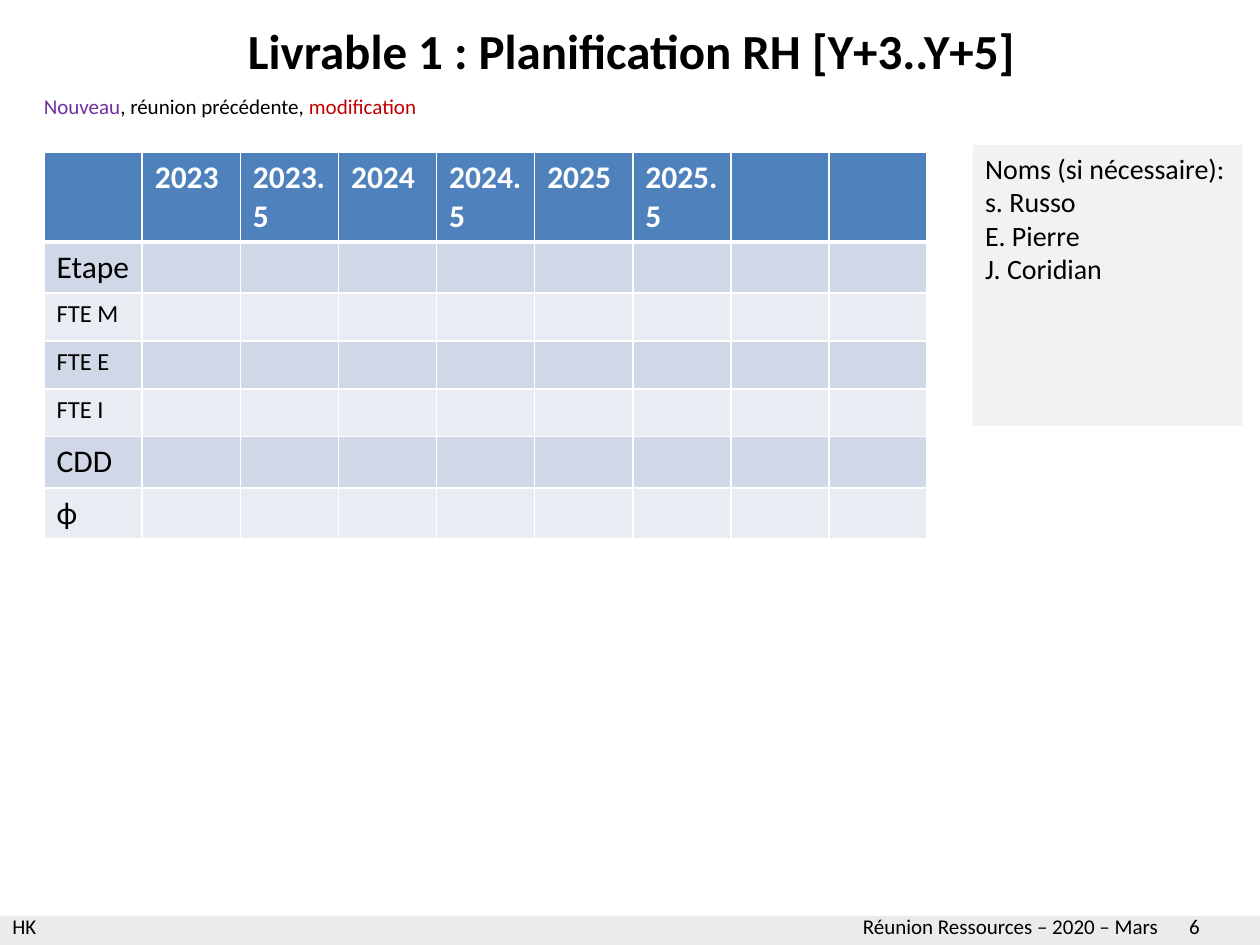
import pptx
import pptx.dml.color
import pptx.enum.shapes
import pptx.enum.text
import pptx.oxml.ns
import pptx.util
import lxml.etree

Inches = pptx.util.Inches
Align = pptx.enum.text.PP_ALIGN
Anchor = pptx.enum.text.MSO_ANCHOR

BLACK = "000000"
WHITE = "FFFFFF"
HEADS = ["", "2023", "2023.5", "2024", "2024.5", "2025", "2025.5", "", ""]
ROWS = [("Etape", 18), ("FTE M", 14), ("FTE E", 14), ("FTE I", 14), ("CDD", 18), ("ϕ", 18)]
BANDS = ["D0D8E7", "E9ECF3"]


def paint(target, color):
    """Give a fill or line a solid colour."""
    target.solid()
    target.fore_color.rgb = pptx.dml.color.RGBColor.from_string(color)


def add_node(parent, tag, **attrs):
    """Append a DrawingML element to its parent."""
    return lxml.etree.SubElement(parent, pptx.oxml.ns.qn(tag), **attrs)


def write(frame, *lines, size=12, color=BLACK, bold=False, align=Align.LEFT, anchor=Anchor.TOP):
    """Write lines, each a string or a list of (text, colour) runs, into a frame."""
    frame.word_wrap = True
    frame.auto_size = pptx.enum.text.MSO_AUTO_SIZE.NONE
    frame.vertical_anchor = anchor
    for num, line in enumerate(lines):
        para = frame.add_paragraph() if num else frame.paragraphs[0]
        para.alignment = align
        for text, tint in [(line, color)] if isinstance(line, str) else line:
            run = para.add_run()
            run.text = text
            run.font.name = "Calibri"
            run.font.size = pptx.util.Pt(size)
            run.font.bold = bold
            paint(run.font.fill, tint)


def add_text(slide, box, *lines, **style):
    """Add a text box."""
    shape = slide.shapes.add_textbox(*map(Inches, box))
    write(shape.text_frame, *lines, **style)


def add_rect(slide, box, color):
    """Add a plain rectangle without a line."""
    shape = slide.shapes.add_shape(pptx.enum.shapes.MSO_SHAPE.RECTANGLE, *map(Inches, box))
    shape.shadow.inherit = False
    shape.line.fill.background()
    paint(shape.fill, color)
    return shape


def add_foot(slide, box):
    """Place the grey footer band and its three texts."""
    left, top, width, height = box
    band = add_rect(slide, (left, top + 0.07, width, height - 0.07), "D9D9D9")
    tint = band.fill._xPr.find(".//" + pptx.oxml.ns.qn("a:srgbClr"))
    add_node(tint, "a:alpha", val="50000")
    for shift, wide, text in [
        (6.75, 2.95, "Réunion Ressources – 2020 – Mars"),
        (9.34, 0.66, "6"),
        (0, 1.23, "HK"),
    ]:
        add_text(slide, (left + shift, top, wide, height), text)


def add_head(slide, box):
    """Place the title and the colour key below it."""
    left, top, width, height = box
    title = slide.shapes.title
    title.left, title.top, title.width, title.height = map(Inches, box)
    write(title.text_frame, "Livrable 1 : Planification RH [Y+3..Y+5]",
          size=28, bold=True, align=Align.CENTER, anchor=Anchor.MIDDLE)
    key = [("Nouveau", "7030A0"), (", réunion précédente, ", BLACK), ("modification", "C00000")]
    add_text(slide, (left - 0.26, top + 0.64, 3.16, 0.3), key)


def edge_cell(cell, row):
    """Draw white cell borders, thicker under the header row."""
    props = cell._tc.get_or_add_tcPr()
    for side in "LRTB":
        thick = (row, side) in [(0, "B"), (1, "T")]
        line = add_node(props, "a:ln" + side, w=str(pptx.util.Pt(3 if thick else 0.96)))
        fill = add_node(line, "a:solidFill")
        add_node(fill, "a:srgbClr", val=WHITE)


def fill_cell(cell, row, text, size, band, color=BLACK, bold=False):
    """Format one table cell and write its text."""
    edge_cell(cell, row)
    paint(cell.fill, band)
    if text:
        write(cell.text_frame, text, size=size, color=color, bold=bold)
    else:
        add_node(cell.text_frame.paragraphs[0]._p, "a:endParaRPr", sz="1600")


def add_plan(slide, box):
    """Place the staffing table."""
    table = slide.shapes.add_table(len(ROWS) + 1, len(HEADS), *map(Inches, box)).table
    table.horz_banding = False
    for col in table.columns:
        col.width = Inches(box[2] / len(HEADS))
    for num, row in enumerate(table.rows):
        row.height = Inches(0.38 if num else 0.6)
    for col, text in enumerate(HEADS):
        fill_cell(table.cell(0, col), 0, text, 18, "4F81BD", color=WHITE, bold=True)
    for row, (label, size) in enumerate(ROWS, 1):
        for col in range(len(HEADS)):
            text = "" if col else label
            fill_cell(table.cell(row, col), row, text, size, BANDS[(row - 1) % 2])


def add_names(slide, box):
    """Place the grey panel of names."""
    panel = add_rect(slide, box, "F2F2F2")
    write(panel.text_frame, "Noms (si nécessaire):", "s. Russo", "E. Pierre", "J. Coridian", size=16)


def main():
    """Build and save the slide."""
    deck = pptx.Presentation()
    deck.slide_width, deck.slide_height = Inches(10), Inches(7.5)
    slide = deck.slides.add_slide(deck.slide_layouts[5])
    add_foot(slide, (0, 7.2, 10, 0.3))
    add_plan(slide, (0.35, 1.21, 7.01, 3.1))
    add_head(slide, (0.51, 0.05, 9, 0.69))
    add_names(slide, (7.72, 1.15, 2.14, 2.23))
    deck.save("out.pptx")


if __name__ == "__main__":
    main()
